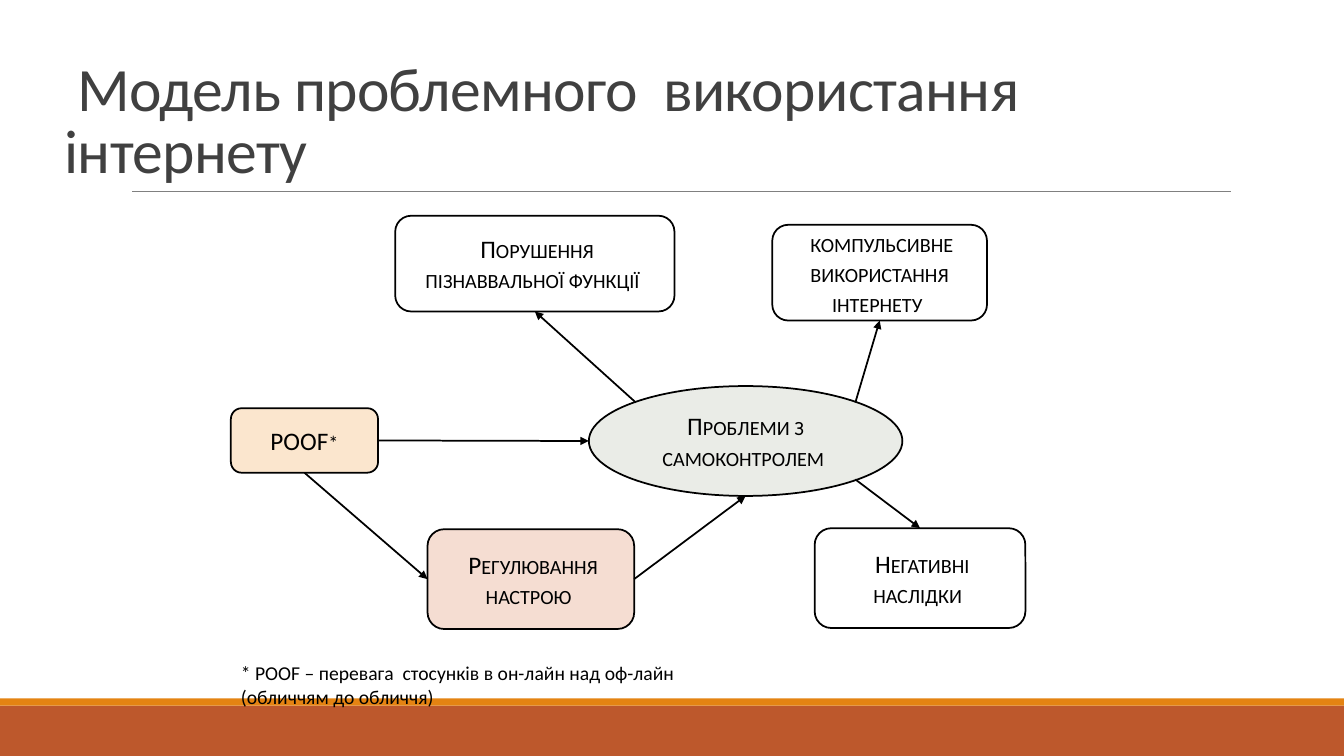
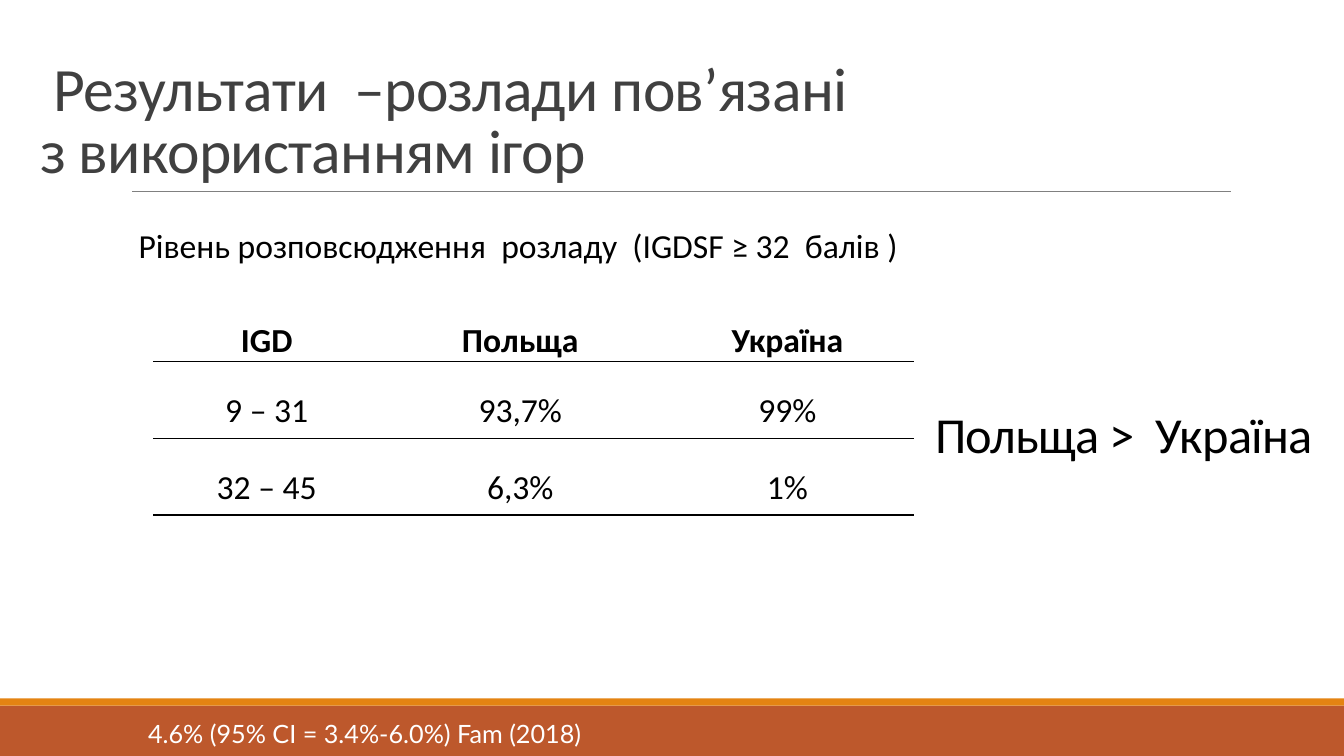
from lxml import etree
from pptx import Presentation
from pptx.dml.color import RGBColor
from pptx.enum import shapes, text
from pptx.oxml.ns import qn
from pptx.util import Pt

PX = 9144  # EMU in one px, 100 px to the inch
SLIDE_WIDTH, SLIDE_HEIGHT = 1333, 750

RUST = RGBColor(0xBD, 0x58, 0x2C)
ORANGE = RGBColor(0xE4, 0x83, 0x12)
RULE_GREY = RGBColor(0x80, 0x80, 0x80)
TITLE_GREY = RGBColor(0x40, 0x40, 0x40)
BLACK = RGBColor(0, 0, 0)
WHITE = RGBColor(0xFF, 0xFF, 0xFF)
CREAM = RGBColor(0xFB, 0xE6, 0xCE)
ROSE = RGBColor(0xF5, 0xDD, 0xD2)
SAGE = RGBColor(0xEA, 0xEC, 0xE7)

BODY_FONT, NOTE_FONT = "Calibri", "Lato"
PLAIN_TABLE_STYLE = "{2D5ABB26-0587-4C30-8999-92F81FD0307C}"

ROUNDED = shapes.MSO_SHAPE.ROUNDED_RECTANGLE
OVAL = shapes.MSO_SHAPE.OVAL

# Connection sites: index and position as a fraction of the shape's box.
BOX_SITES = {"top": (0, 0.5, 0), "left": (1, 0, 0.5),
             "bottom": (2, 0.5, 1), "right": (3, 1, 0.5)}
OVAL_SITES = {"top left": (1, 0.15, 0.15), "left": (2, 0, 0.5),
              "bottom": (4, 0.5, 1), "bottom right": (5, 0.85, 0.85),
              "top right": (7, 0.85, 0.15)}

# name: outline, fill, box relative to the diagram, wording
NODES = {
    "preference": (ROUNDED, CREAM, (0, 191, 146, 64), "POOF*"),
    "mood": (ROUNDED, ROSE, (195, 311, 205, 99), " Регулювання настрою "),
    "cognition": (ROUNDED, WHITE, (163, 0, 277, 95),
                  " Порушення пізнаввальної функції "),
    "outcomes": (ROUNDED, WHITE, (579, 310, 209, 99), " Негативні наслідки "),
    "compulsion": (ROUNDED, WHITE, (537, 9, 213, 95),
                   " компульсивне використання інтернету "),
    "control": (OVAL, SAGE, (355, 169, 311, 109), "Проблеми з самоконтролем "),
}
ARROWS = [
    ("preference", "bottom", "mood", "left"),
    ("mood", "right", "control", "bottom"),
    ("preference", "right", "control", "left"),
    ("control", "top right", "compulsion", "bottom"),
    ("control", "top left", "cognition", "bottom"),
    ("control", "bottom right", "outcomes", "top"),
]

PREVALENCE = [
    ("IGD", " Польща ", " Україна "),
    ("9 – 31", "93,7%", "99%"),
    ("32 – 45", "6,3%", "1%"),
]


def emu(*lengths):
    return [round(length * PX) for length in lengths]


def style_paragraph(paragraph, size, color=BLACK, font=BODY_FONT, bold=False,
                    spacing=None, align=None, **extras):
    """Set the paragraph's font; extras are further font attributes (spc, cap)."""
    paragraph.font.name = font
    paragraph.font.size = Pt(size)
    paragraph.font.bold = bold
    paragraph.font.color.rgb = color
    paragraph.line_spacing = spacing
    paragraph.alignment = align
    for name, value in extras.items():
        paragraph._p.pPr.find(qn("a:defRPr")).set(name, value)


def add_text(slide, box, wording, size, anchor=text.MSO_ANCHOR.TOP, **style):
    frame = slide.shapes.add_textbox(*emu(*box)).text_frame
    frame.word_wrap = True
    frame.vertical_anchor = anchor
    frame.paragraphs[0].text = wording
    style_paragraph(frame.paragraphs[0], size, **style)


def add_outline(slide, kind, box, fill, line=None):
    shape = slide.shapes.add_shape(kind, *emu(*box))
    shape.shadow.inherit = False
    shape.fill.solid()
    shape.fill.fore_color.rgb = fill
    if line is None:
        shape.line.fill.background()
    else:
        shape.line.color.rgb = line
        shape.line.width = Pt(1.25)
    return shape


def add_line(slide, start, end, color, width):
    line = slide.shapes.add_connector(
        shapes.MSO_CONNECTOR.STRAIGHT, *emu(*start, *end))
    line.line.color.rgb = color
    line.line.width = Pt(width)
    etree.SubElement(line._element.spPr, qn("a:effectLst"))
    return line


def add_framed_slide(presentation, title, title_box):
    """Add a blank slide with the bottom bands, the rule and a title."""
    slide = presentation.slides.add_slide(presentation.slide_layouts[6])
    rectangle = shapes.MSO_SHAPE.RECTANGLE
    add_outline(slide, rectangle, (0, 700, SLIDE_WIDTH, 50), RUST)
    add_outline(slide, rectangle, (0, 693, SLIDE_WIDTH, 7), ORANGE)
    add_line(slide, (131, 190), (1221, 190), RULE_GREY, 0.5)
    add_text(slide, title_box, title, 44, anchor=text.MSO_ANCHOR.BOTTOM,
             color=TITLE_GREY, spacing=0.85, spc="-50")
    return slide


def add_node(slide, kind, fill, box, wording):
    shape = add_outline(slide, kind, box, fill, BLACK)
    frame = shape.text_frame
    frame.word_wrap = True
    frame.vertical_anchor = text.MSO_ANCHOR.MIDDLE
    frame.paragraphs[0].text = wording
    style_paragraph(frame.paragraphs[0], 18, align=text.PP_ALIGN.CENTER,
                    cap="small")
    return shape


def find_site(shape, side):
    """Return the site's index and its point in px."""
    sites = OVAL_SITES if shape.auto_shape_type == OVAL else BOX_SITES
    index, across, down = sites[side]
    return index, ((shape.left + across * shape.width) / PX,
                   (shape.top + down * shape.height) / PX)


def add_arrow(slide, source, source_side, target, target_side):
    source_index, start = find_site(source, source_side)
    target_index, end = find_site(target, target_side)
    arrow = add_line(slide, start, end, BLACK, 1.25)
    arrow._connect_begin_to(source, source_index)
    arrow._connect_end_to(target, target_index)
    etree.SubElement(arrow.line._get_or_add_ln(), qn("a:tailEnd"),
                     type="triangle")


def add_diagram(slide, left, top):
    nodes = {}
    for name, (kind, fill, (x, y, width, height), wording) in NODES.items():
        box = (left + x, top + y, width, height)
        nodes[name] = add_node(slide, kind, fill, box, wording)
    for source, source_side, target, target_side in ARROWS:
        add_arrow(slide, nodes[source], source_side, nodes[target], target_side)


def underline_cell(cell):
    properties = cell._tc.get_or_add_tcPr()
    border = etree.Element(qn("a:lnB"), w=str(Pt(1)))
    fill = etree.SubElement(border, qn("a:solidFill"))
    etree.SubElement(fill, qn("a:srgbClr"), val=str(BLACK))
    properties.insert(0, border)


def add_prevalence_table(slide, left, top):
    widths, heights = (225, 278, 252), (63, 76, 76)
    table = slide.shapes.add_table(
        len(heights), len(widths),
        *emu(left, top, sum(widths), sum(heights))).table
    table.first_row = table.horz_banding = False
    table._tbl.tblPr.find(qn("a:tableStyleId")).text = PLAIN_TABLE_STYLE
    for column, width in zip(table.columns, emu(*widths)):
        column.width = width
    for row, height in zip(table.rows, emu(*heights)):
        row.height = height
    for row_index, values in enumerate(PREVALENCE):
        for column_index, value in enumerate(values):
            cell = table.cell(row_index, column_index)
            cell.fill.background()
            underline_cell(cell)
            cell.vertical_anchor = text.MSO_ANCHOR.MIDDLE
            cell.margin_left, cell.margin_right, cell.margin_top = emu(2, 2, 2)
            cell.margin_bottom = 0
            paragraph = cell.text_frame.paragraphs[0]
            paragraph.text = value
            style_paragraph(paragraph, 24, bold=row_index == 0, spacing=1.5,
                            align=text.PP_ALIGN.CENTER)


def add_model_slide(presentation):
    slide = add_framed_slide(
        presentation, " Модель проблемного  використання інтернету",
        (54, 31, 1166, 159))
    add_diagram(slide, 229, 214)
    add_text(slide, (229, 651, 518, 57),
             "* POOF – перевага  стосунків в он-лайн над оф-лайн  "
             "(обличчям до обличчя)", 14)


def add_results_slide(presentation):
    slide = add_framed_slide(
        presentation,
        " Результати  –розлади пов’язані \nз використанням ігор",
        (30, 31, 1259, 159))
    add_text(slide, (120, 218, 998, 50),
             " Рівень розповсюдження  розладу  (IGDSF ≥ 32  балів )", 24)
    add_prevalence_table(slide, 152, 296)
    add_text(slide, (137, 708, 667, 40),
             "4.6% (95% CI = 3.4%-6.0%) Fam (2018)", 18,
             color=WHITE, font=NOTE_FONT)
    add_text(slide, (907, 404, 426, 62), " Польща >  Україна", 36,
             spacing=0.85, spc="-50")


def main():
    presentation = Presentation()
    presentation.slide_width, presentation.slide_height = emu(
        SLIDE_WIDTH, SLIDE_HEIGHT)
    add_model_slide(presentation)
    add_results_slide(presentation)
    presentation.save("out.pptx")


if __name__ == "__main__":
    main()
